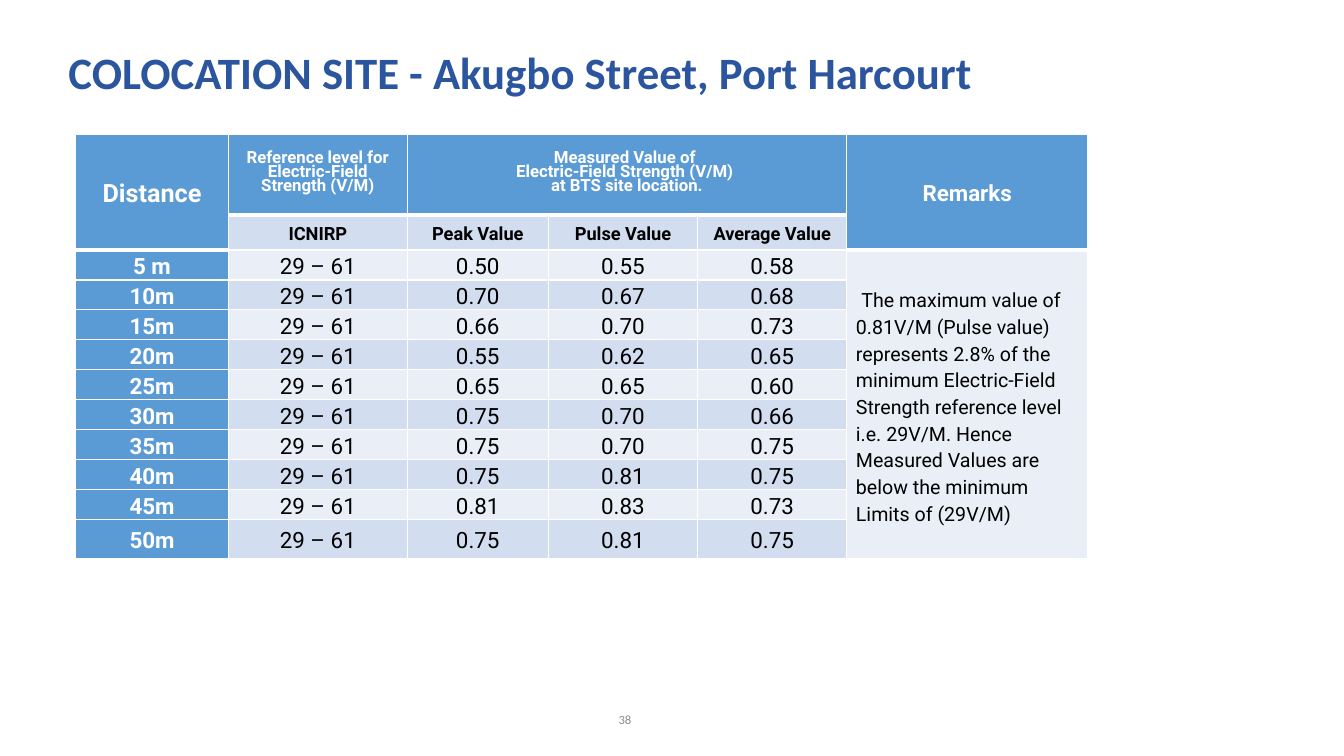
from dataclasses import dataclass

from lxml.etree import SubElement
from pptx import Presentation
from pptx.dml.color import RGBColor
from pptx.enum.text import MSO_ANCHOR as Anchor, MSO_AUTO_SIZE as AutoSize, PP_ALIGN as Align
from pptx.oxml.ns import qn
from pptx.util import Cm, Pt


@dataclass(frozen=True)
class Theme:
    # Fonts
    title_font: str = "Calibri"
    table_font: str = "Roboto"
    # Colours
    title: str = "2C55A0"
    header: str = "5B9BD5"
    bands: tuple = ("EAEFF7", "D2DEEF")
    white: str = "FFFFFF"
    black: str = "000000"
    grey: str = "8C8C8C"
    # Type sizes
    title_size: int = 32
    distance_size: int = 18
    body_size: int = 16
    remark_size: int = 14
    subheader_size: int = 13
    header_size: int = 12
    number_size: int = 9


THEME = Theme()

COLUMN_WIDTHS = (3.86, 4.5, 3.56, 3.76, 3.76, 6.07)
ROW_HEIGHTS = (2.03, 0.89, *[0.66] * 9, 0.99)
HEADERS = ("Distance", "Reference level for Electric-Field Strength (V/M)",
           "Measured Value of \nElectric-Field Strength (V/M) \nat BTS site location.",
           "", "", "Remarks")
SUBHEADERS = ("ICNIRP", "Peak Value", "Pulse Value", "Average Value")
REFERENCE = "29 – 61"
MEASUREMENTS = (
    ("5 m", "0.50", "0.55", "0.58"),
    ("10m", "0.70", "0.67", "0.68"),
    ("15m", "0.66", "0.70", "0.73"),
    ("20m", "0.55", "0.62", "0.65"),
    ("25m", "0.65", "0.65", "0.60"),
    ("30m", "0.75", "0.70", "0.66"),
    ("35m", "0.75", "0.70", "0.75"),
    ("40m", "0.75", "0.81", "0.75"),
    ("45m", "0.81", "0.83", "0.73"),
    ("50m", "0.75", "0.81", "0.75"),
)
REMARK = ("The maximum value of 0.81V/M (Pulse value) represents 2.8% of the minimum "
          "Electric-Field Strength reference level i.e. 29V/M. Hence Measured Values "
          "are below the minimum Limits of (29V/M)")


def write(frame, text, *, size, color, font=THEME.table_font, bold=False,
          align=Align.CENTER, spacing=1.15):
    """Add text to the first paragraph of a frame, with its format."""
    paragraph = frame.paragraphs[0]
    paragraph.alignment = align
    paragraph.line_spacing = spacing
    for index, line in enumerate(text.split("\n")):
        if index:
            paragraph.add_line_break()
        run = paragraph.add_run()
        run.text = line
        run.font.name = font
        run.font.size = Pt(size)
        run.font.bold = bold
        run.font.color.rgb = RGBColor.from_string(color)


class SlideBuilder:
    def __init__(self, presentation, theme):
        self.theme = theme
        self.slide = presentation.slides.add_slide(presentation.slide_layouts[5])

    def title(self, text, left, top, width, height):
        shape = self.slide.shapes.title
        shape.left, shape.top, shape.width, shape.height = map(Cm, (left, top, width, height))
        frame = shape.text_frame
        frame.word_wrap = True
        frame.auto_size = AutoSize.NONE
        frame.vertical_anchor = Anchor.MIDDLE
        write(frame, text, size=self.theme.title_size, color=self.theme.title,
              font=self.theme.title_font, bold=True, align=Align.LEFT, spacing=0.9)

    def page_number(self, text, left, top, width, height):
        frame = self.slide.shapes.add_textbox(*map(Cm, (left, top, width, height))).text_frame
        frame.word_wrap = True
        frame.vertical_anchor = Anchor.MIDDLE
        write(frame, text, size=self.theme.number_size, color=self.theme.grey,
              font=self.theme.title_font, spacing=1.0)

    def table(self, left, top, widths, heights):
        shape = self.slide.shapes.add_table(
            len(heights), len(widths), Cm(left), Cm(top), Cm(sum(widths)), Cm(sum(heights)))
        table = shape.table
        for column, width in zip(table.columns, widths):
            column.width = Cm(width)
        for row, height in zip(table.rows, heights):
            row.height = Cm(height)
        return table

    def borders(self, cell, top=1, bottom=1):
        properties = cell._tc.get_or_add_tcPr()
        for side, width in (("L", 1), ("R", 1), ("T", top), ("B", bottom)):
            line = SubElement(properties, qn(f"a:ln{side}"), w=str(Pt(width)))
            fill = SubElement(line, qn("a:solidFill"))
            SubElement(fill, qn("a:srgbClr"), val=self.theme.white)

    def cell(self, cell, fill, text="", margin=0.23, top=1, bottom=1, **text_format):
        self.borders(cell, top, bottom)
        cell.fill.solid()
        cell.fill.fore_color.rgb = RGBColor.from_string(fill)
        cell.vertical_anchor = Anchor.MIDDLE
        cell.margin_left = cell.margin_right = Cm(margin)
        cell.margin_top = cell.margin_bottom = 0
        if text:
            write(cell.text_frame, text, **text_format)


def main():
    presentation = Presentation()
    presentation.slide_width, presentation.slide_height = Cm(33.87), Cm(19.05)
    builder = SlideBuilder(presentation, THEME)
    builder.title("COLOCATION SITE - Akugbo Street, Port Harcourt", 1.47, 0.05, 25.2, 3.68)

    # Table and merged areas
    table = builder.table(1.9, 3.38, COLUMN_WIDTHS, ROW_HEIGHTS)
    last = len(COLUMN_WIDTHS) - 1
    for column in (0, last):
        table.cell(0, column).merge(table.cell(1, column))
    table.cell(0, 2).merge(table.cell(0, 4))
    table.cell(2, last).merge(table.cell(len(ROW_HEIGHTS) - 1, last))

    # Header rows
    for column, text in enumerate(HEADERS):
        size = {0: THEME.distance_size, last: THEME.body_size}.get(column, THEME.header_size)
        spacing = 1.15 if column in (0, last) else Pt(10)
        builder.cell(table.cell(0, column), THEME.header, text, margin=0.18, bottom=3,
                     size=size, color=THEME.white, bold=True, spacing=spacing)
    for column, text in enumerate(SUBHEADERS, start=1):
        builder.cell(table.cell(1, column), THEME.bands[1], text, top=3,
                     size=THEME.subheader_size, color=THEME.black, bold=True)
    for column in (0, last):
        builder.cell(table.cell(1, column), THEME.header, bottom=3)

    # Measurements
    for index, (distance, *values) in enumerate(MEASUREMENTS):
        row = index + 2
        top = 1 if index else 3
        builder.cell(table.cell(row, 0), THEME.header, distance, top=top,
                     size=THEME.body_size, color=THEME.white, bold=True)
        for column, value in enumerate((REFERENCE, *values), start=1):
            builder.cell(table.cell(row, column), THEME.bands[index % 2], value,
                         size=THEME.body_size, color=THEME.black)
        builder.cell(table.cell(row, last), THEME.bands[0], top=top)

    # Remark, led by a wider no-break space
    remark = table.cell(2, last).text_frame
    for text, size in ((" ", THEME.body_size), (REMARK, THEME.remark_size)):
        write(remark, text, size=size, color=THEME.black, align=Align.LEFT)

    builder.page_number("38", 11.94, 17.63, 7.62, 1.02)
    presentation.save("out.pptx")


if __name__ == "__main__":
    main()
